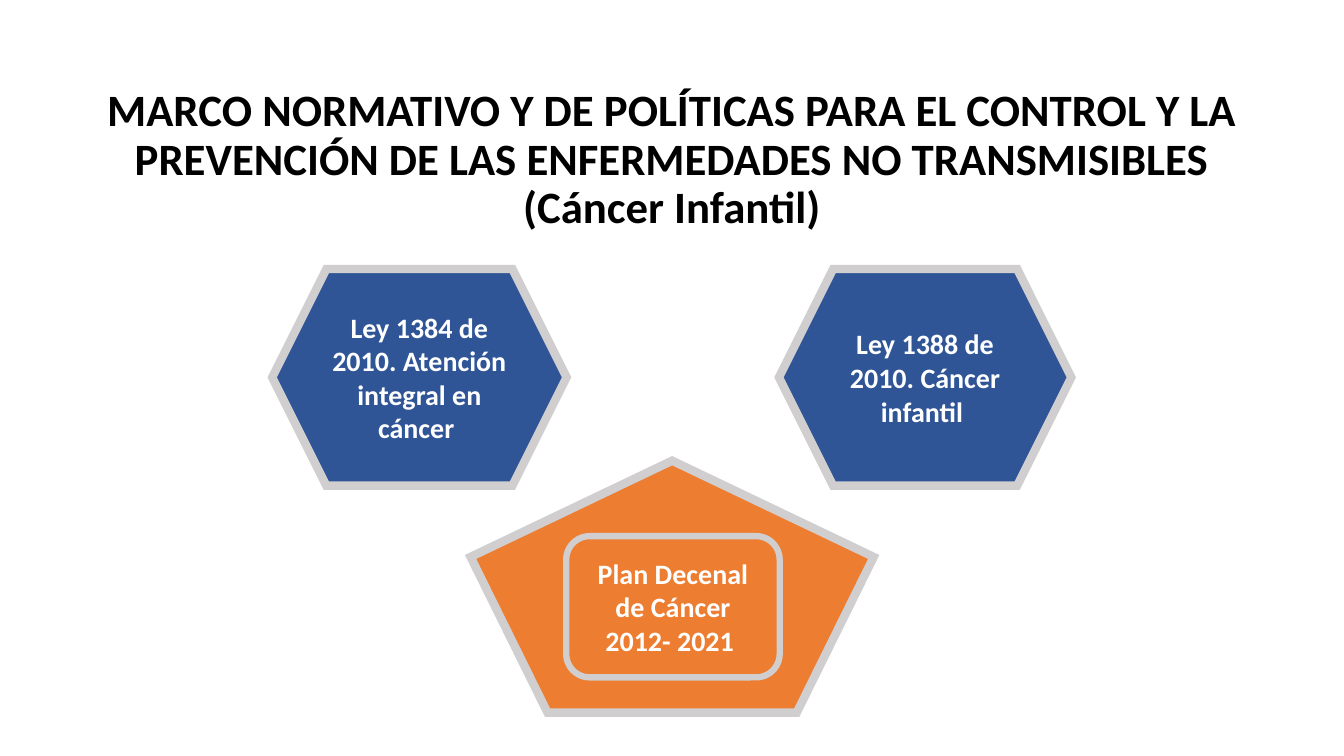
from pptx import Presentation
from pptx.dml.color import RGBColor
from pptx.enum.shapes import MSO_SHAPE as Shape
from pptx.enum.text import MSO_ANCHOR as Anchor, PP_ALIGN as Align
from pptx.oxml.ns import qn
from pptx.util import Cm, Pt
from lxml.etree import SubElement

COLORS = {
    "title": "000000",
    "text": "FFFFFF",
    "law": "2F5597",
    "plan": "ED7D31",
    "edge": "D0CECE",
}


def color(name):
    return RGBColor.from_string(COLORS[name])


class Deck:
    font = "Calibri"

    def __init__(self):
        self.prs = Presentation()
        self.prs.slide_width = Cm(33.87)
        self.prs.slide_height = Cm(19.05)
        self.slide = self.prs.slides.add_slide(self.prs.slide_layouts[6])

    def label(self, frame, text, size, tone, lead=1.0):
        """Fill a text frame with centred bold text."""
        frame.word_wrap = True
        frame.vertical_anchor = Anchor.MIDDLE
        frame.text = text
        for para in frame.paragraphs:
            para.alignment = Align.CENTER
            para.line_spacing = lead
            for run in para.runs:
                run.font.name = self.font
                run.font.size = Pt(size)
                run.font.bold = True
                run.font.color.rgb = color(tone)

    def title(self, box, text):
        area = self.slide.shapes.add_textbox(*map(Cm, box))
        self.label(area.text_frame, text, 32, "title", 0.9)

    def block(self, kind, box, fill, edge=6, text=""):
        """Add a filled shape with a thick, sharp-cornered outline."""
        shape = self.slide.shapes.add_shape(kind, *map(Cm, box))
        shape.shadow.inherit = False
        shape.fill.solid()
        shape.fill.fore_color.rgb = color(fill)
        shape.line.color.rgb = color("edge")
        shape.line.width = Pt(edge)
        line = shape.element.spPr.find(qn("a:ln"))
        SubElement(line, qn("a:miter")).set("lim", "800000")
        if text:
            self.label(shape.text_frame, text, 20, "text")


def main():
    deck = Deck()
    deck.title(
        (2.33, 2.21, 29.21, 3.68),
        "MARCO NORMATIVO Y DE POLÍTICAS PARA EL CONTROL Y LA PREVENCIÓN "
        "DE LAS ENFERMEDADES NO TRANSMISIBLES\v(Cáncer Infantil)",
    )
    laws = [
        (6.86, 7.42, "Ley 1384 de 2010. Atención integral en cáncer "),
        (19.63, 7.37, "Ley 1388 de 2010. Cáncer infantil "),
    ]
    for left, width, text in laws:
        deck.block(Shape.HEXAGON, (left, 6.78, width, 5.46), "law", text=text)
    deck.block(Shape.REGULAR_PENTAGON, (11.86, 11.61, 10.16, 6.35), "plan")
    deck.block(Shape.ROUNDED_RECTANGLE, (14.27, 13.51, 5.38, 3.56), "plan",
               4.5, "Plan Decenal de Cáncer 2012- 2021 ")
    deck.prs.save("out.pptx")


if __name__ == "__main__":
    main()
